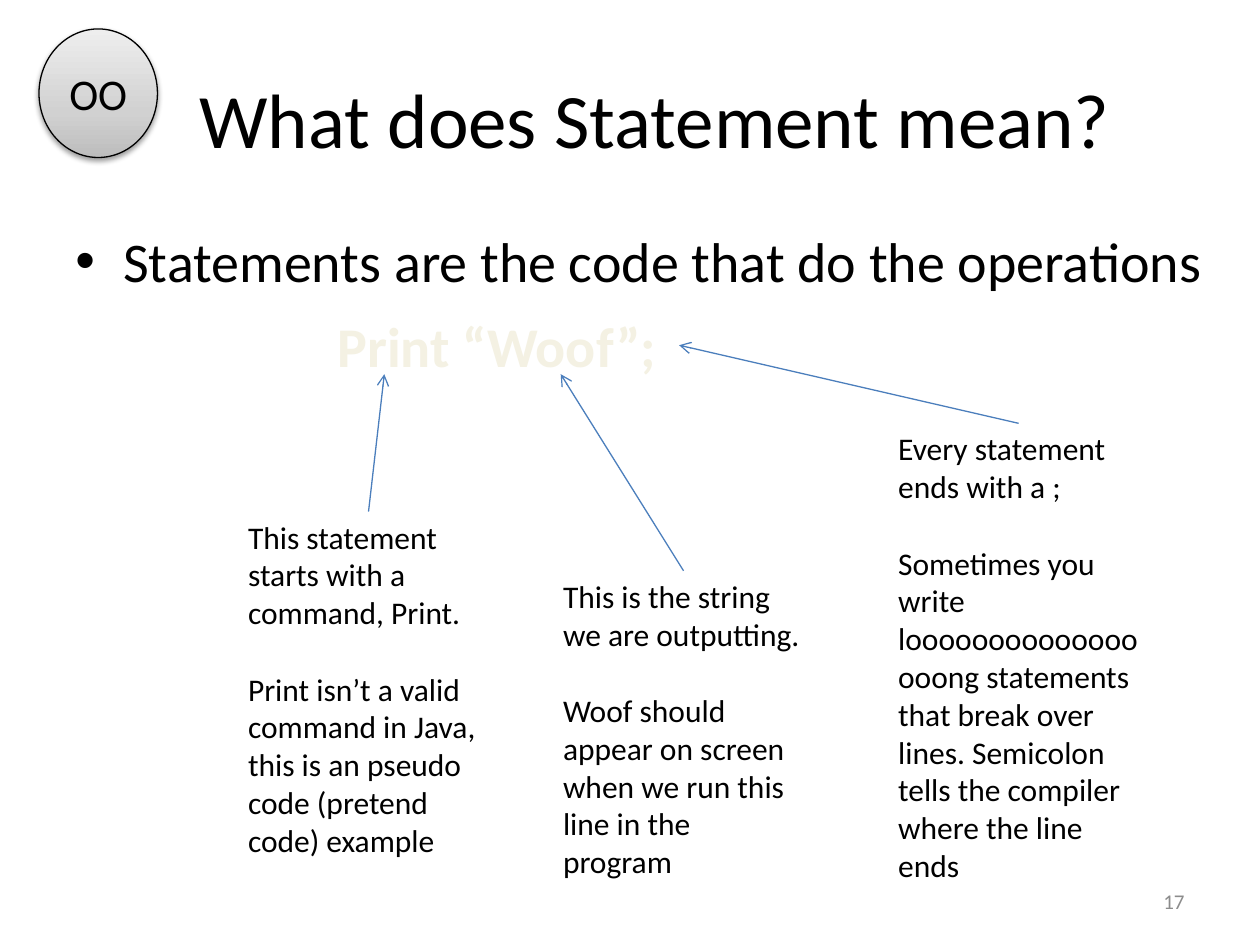
import copy

import lxml.etree
import pptx
import pptx.dml.color
import pptx.enum.shapes
import pptx.enum.text
import pptx.oxml
import pptx.oxml.ns
import pptx.util

CELL = pptx.util.Inches(0.1)
COLUMNS, ROWS = 100, 75
COLORS = {
    "text": "000000",
    "code": "F4F1E3",
    "arrow": "4B7EBC",
    "number": "8C8C8C",
    "badge_dark": "BDBDBD",
    "badge_middle": "D1D1D1",
    "badge_light": "EEEEEE",
}
ALIGN = pptx.enum.text.PP_ALIGN
ANCHOR = pptx.enum.text.MSO_ANCHOR
TOP, RIGHT = 0, 3
NOTE_WIDTH = 21.1
NOTES = [
    ((18.7, 40.6, NOTE_WIDTH, 28.3), (30.5, 29.7), [
        "This statement starts with a command, Print.",
        "Print isn’t a valid command in Java, this is an pseudo code (pretend code) example",
    ]),
    ((43.7, 45.3, NOTE_WIDTH, 25.2), (44.5, 29.7), [
        "This is the string we are outputting.",
        "Woof should appear on screen when we run this line in the program",
    ]),
    ((70.3, 33.6, NOTE_WIDTH, 37.4), None, [
        "Every statement ends with a ;",
        "Sometimes you write looooooooooooooooong statements that break over lines. "
        "Semicolon tells the compiler where the line ends",
    ]),
]


def cells(*counts):
    """Turn counts of grid cells into lengths."""
    return [round(count * CELL) for count in counts]


def color(name):
    """Look up a colour by its role."""
    return pptx.dml.color.RGBColor.from_string(COLORS[name])


def drawing_element(tag, parent, **attributes):
    """Append a DrawingML element to a parent."""
    return lxml.etree.SubElement(parent, pptx.oxml.ns.qn(tag), attributes)


def write(shape, lines, size, color_name="text", align=ALIGN.LEFT, anchor=ANCHOR.TOP, bold=False):
    """Fill a shape with paragraphs of one style."""
    frame = shape.text_frame
    frame.word_wrap = True
    frame.vertical_anchor = anchor
    frame.text = "\n".join(lines)
    for paragraph in frame.paragraphs:
        paragraph.alignment = align
        for run in paragraph.runs:
            run.font.name = "Calibri"
            run.font.size = pptx.util.Pt(size)
            run.font.bold = bold
            run.font.color.rgb = color(color_name)


def add_text(slide, box, lines, size, **style):
    """Add a text box on the grid."""
    shape = slide.shapes.add_textbox(*cells(*box))
    write(shape, lines, size, **style)
    return shape


def add_bullet(slide, box, line):
    """Add the bulleted statement."""
    paragraph = add_text(slide, box, [line], 32).text_frame.paragraphs[0]
    paragraph.space_before = pptx.util.Pt(6.4)
    properties = paragraph._p.get_or_add_pPr()
    indent = pptx.util.Inches(0.38)
    properties.set("marL", str(indent))
    properties.set("indent", str(-indent))
    drawing_element("a:buFont", properties, typeface="Arial")
    drawing_element("a:buChar", properties, char="•")


def add_badge(slide, box, label):
    """Add the round shaded badge."""
    badge = slide.shapes.add_shape(pptx.enum.shapes.MSO_SHAPE.OVAL, *cells(*box))
    badge.fill.gradient()
    badge.fill.gradient_angle = 90
    stops = badge._element.spPr.find(".//" + pptx.oxml.ns.qn("a:gsLst"))
    stops.append(copy.deepcopy(stops[0]))
    shades = [("badge_dark", 0), ("badge_middle", 0.35), ("badge_light", 1)]
    for stop, (name, position) in zip(badge.fill.gradient_stops, shades):
        stop.color.rgb = color(name)
        stop.position = position
    badge.line.color.rgb = color("text")
    badge.line.width = pptx.util.Pt(0.75)
    badge.shadow.inherit = False
    effects = badge._element.spPr.find(pptx.oxml.ns.qn("a:effectLst"))
    shadow = drawing_element("a:outerShdw", effects, blurRad="40000", dist="20000",
                             dir="5400000", rotWithShape="0")
    shade = drawing_element("a:srgbClr", shadow, val=COLORS["text"])
    drawing_element("a:alpha", shade, val="38000")
    write(badge, [label], 25, align=ALIGN.CENTER, anchor=ANCHOR.MIDDLE)
    badge.text_frame.margin_left = badge.text_frame.margin_right = 0


def add_note(slide, box, target, lines, code):
    """Add a note with an arrow to a point, or to the right end of the code."""
    note = add_text(slide, box, lines, 18)
    note.text_frame.paragraphs[1].space_before = pptx.util.Pt(22)
    left, top, width, _ = box
    arrow = slide.shapes.add_connector(
        pptx.enum.shapes.MSO_CONNECTOR.STRAIGHT,
        *cells(left + width / 2, top, *(target or (left, top))))
    arrow.begin_connect(note, TOP)
    if target is None:
        arrow.end_connect(code, RIGHT)
    arrow.line.color.rgb = color("arrow")
    arrow.line.width = pptx.util.Pt(0.75)
    drawing_element("a:tailEnd", arrow.line._get_or_add_ln(), type="arrow")
    drawing_element("a:effectLst", arrow._element.spPr)


def add_statement_slide(presentation):
    """Add the slide that explains a statement."""
    slide = presentation.slides.add_slide(presentation.slide_layouts[6])
    add_text(slide, (7, 3.1, 90, 12.5), ["What does Statement mean?"], 44,
             align=ALIGN.CENTER, anchor=ANCHOR.MIDDLE)
    add_bullet(slide, (5, 17.5, 92.7, 49.5), "Statements are the code that do the operations")
    add_badge(slide, (3.1, 2.3, 9.4, 10.2), "OO")
    code = add_text(slide, (25.8, 24.2, 28.1, 6.4), ["Print “Woof”;"], 32,
                    color_name="code", bold=True)
    for box, target, lines in NOTES:
        add_note(slide, box, target, lines, code)
    add_text(slide, (71.7, 69.5, 23.3, 4), ["17"], 12, color_name="number",
             align=ALIGN.RIGHT, anchor=ANCHOR.MIDDLE)


def main():
    """Build and save the presentation."""
    presentation = pptx.Presentation()
    presentation.slide_width, presentation.slide_height = cells(COLUMNS, ROWS)
    add_statement_slide(presentation)
    presentation.save("out.pptx")


if __name__ == "__main__":
    main()
